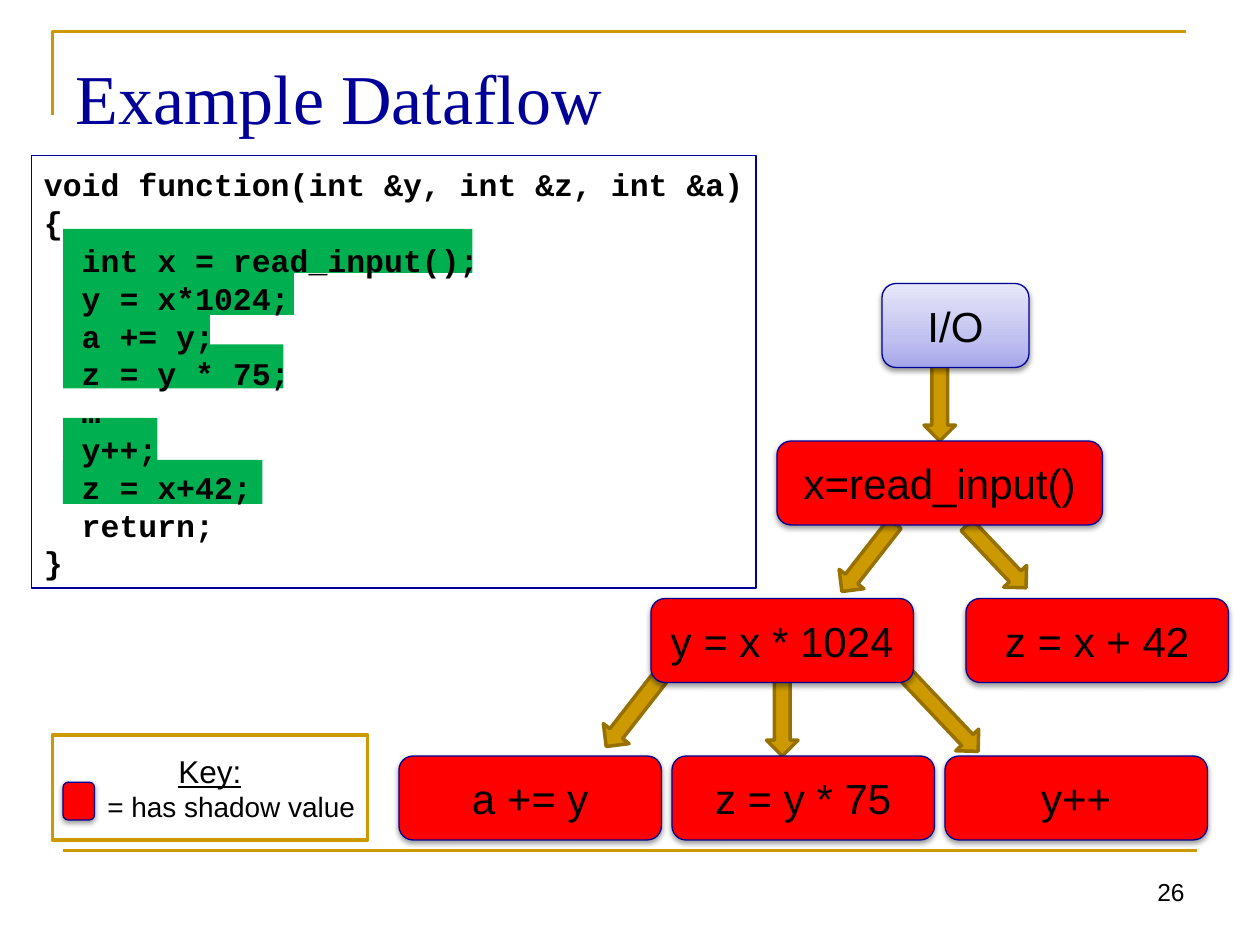
from copy import deepcopy

from lxml.etree import SubElement
from pptx import Presentation
from pptx.dml.color import RGBColor
from pptx.enum.shapes import MSO_CONNECTOR, MSO_SHAPE as Preset
from pptx.enum.text import MSO_ANCHOR as Anchor, PP_ALIGN as Align
from pptx.oxml.ns import qn
from pptx.util import Inches, Pt

BLACK = RGBColor(0x00, 0x00, 0x00)
WHITE = RGBColor(0xFF, 0xFF, 0xFF)
GOLD = RGBColor(0xCC, 0x99, 0x00)
DARK_GOLD = RGBColor(0x97, 0x71, 0x00)
NAVY = RGBColor(0x00, 0x00, 0x96)
TITLE_BLUE = RGBColor(0x00, 0x00, 0x99)
RED = RGBColor(0xFF, 0x00, 0x00)
GREEN = RGBColor(0x00, 0xB0, 0x50)
LILAC = [
    (0, RGBColor(0xA5, 0xA5, 0xEB)),
    (0.35, RGBColor(0xC1, 0xC1, 0xF0)),
    (1, RGBColor(0xE7, 0xE7, 0xFA)),
]

COLUMNS, ROWS = 120, 90
CELL = Inches(10) / COLUMNS
NODE_HEIGHT = 8

CODE = """void function(int &y, int &z, int &a)
{
  int x = read_input();
  y = x*1024;
  a += y;
  z = y * 75;
  …
  y++;
  z = x+42;
  return;
}"""

HIGHLIGHTS = [(43.8, 19), (39.8, 9), (32.8, 21), (29.8, 14), (25.8, 22), (21.8, 39)]
SLANTED_ARROWS = [
    (56, 66, 9, 3.1, 128),
    (82.1, 65.3, 13.1, 3, 46.6),
    (90.8, 51.5, 8.2, 3, 46.6),
    (78.6, 51.6, 8.2, 3, 128),
]
DOWN_ARROWS = [(73, 63, 3, 9), (88, 34, 3, 8)]
NODES = [
    (74, 42, 31, "x=read_input()"),
    (62, 57, 25, "y = x * 1024"),
    (92, 57, 25, "z = x + 42"),
    (38, 72, 25, "a += y"),
    (64, 72, 25, "z = y * 75"),
    (90, 72, 25, "y++"),
]


def grid(*cells):
    return [round(cell * CELL) for cell in cells]


def write(para, text, size, font="Arial", color=BLACK, align=Align.LEFT,
          bold=False, underline=False, spacing=None):
    para.alignment = align
    if spacing:
        para.line_spacing = Pt(spacing)
    span = para.add_run()
    span.text = text
    span.font.name = font
    span.font.size = Pt(size)
    span.font.bold = bold
    span.font.underline = underline
    span.font.color.rgb = color


def add_box(shapes, preset, area, fill=None, line=None, width=0.75, rotation=0):
    box = shapes.add_shape(preset, *grid(*area))
    box.shadow.inherit = False
    box.rotation = rotation
    if fill is None:
        box.fill.background()
    else:
        box.fill.solid()
        box.fill.fore_color.rgb = fill
    if line is None:
        box.line.fill.background()
    else:
        box.line.color.rgb = line
        box.line.width = Pt(width)
    return box


def add_arrow(shapes, preset, area, rotation=0):
    add_box(shapes, preset, area, GOLD, DARK_GOLD, 2, rotation)


def add_node(shapes, area, text=None):
    node = add_box(shapes, Preset.ROUNDED_RECTANGLE, area, RED, NAVY)
    effects = node._element.spPr.find(qn("a:effectLst"))
    shadow = SubElement(effects, qn("a:outerShdw"), blurRad=str(Pt(3.1)),
                        dist=str(Pt(1.6)), dir="5400000", rotWithShape="0")
    tint = SubElement(shadow, qn("a:srgbClr"), val=str(BLACK))
    SubElement(tint, qn("a:alpha"), val="38000")
    if text:
        node.text_frame.vertical_anchor = Anchor.MIDDLE
        write(node.text_frame.paragraphs[0], text, 24, align=Align.CENTER)
    return node


def fill_gradient(shape, stops):
    shape.fill.gradient()
    shape.fill.gradient_angle = 90
    stop_list = shape._element.spPr.find(".//" + qn("a:gsLst"))
    while len(stop_list) < len(stops):
        stop_list.append(deepcopy(stop_list[0]))
    for stop, (position, color) in zip(shape.fill.gradient_stops, stops):
        stop.position = position
        stop.color.rgb = color


def add_frame(shapes):
    builder = shapes.build_freeform(5, 11, scale=CELL)
    builder.add_line_segments([(5, 3), (113, 3)], close=False)
    corner = builder.convert_to_shape()
    corner.shadow.inherit = False
    corner.fill.background()
    rule = shapes.add_connector(MSO_CONNECTOR.STRAIGHT, *grid(6, 81, 114, 81))
    SubElement(rule._element.spPr, qn("a:effectLst"))
    for edge in (corner, rule):
        edge.line.color.rgb = GOLD
        edge.line.width = Pt(1.5)


def add_title(slide, text):
    title = slide.shapes.title
    title.left, title.top, title.width, title.height = grid(6, 3.6, 108, 8.4)
    frame = title.text_frame
    frame.vertical_anchor = Anchor.TOP
    frame.margin_top = Inches(0.13)
    write(frame.paragraphs[0], text, 40, "Times New Roman", TITLE_BLUE)


def add_page_number(shapes, text):
    box = shapes.add_textbox(*grid(86, 82.9, 28, 6.1))
    box.text_frame.word_wrap = True
    write(box.text_frame.paragraphs[0], text, 14, align=Align.RIGHT)


def add_code(shapes):
    box = add_box(shapes, Preset.RECTANGLE, (3, 14.8, 69, 41.2), line=NAVY)
    frame = box.text_frame
    frame.vertical_anchor = Anchor.TOP
    frame.margin_top = Inches(0.08)
    for index, line in enumerate(CODE.splitlines()):
        para = frame.add_paragraph() if index else frame.paragraphs[0]
        write(para, line, 18, "Courier New", bold=True, spacing=21.6)


def add_key(shapes):
    group = shapes.add_group_shape()
    box = add_box(group.shapes, Preset.RECTANGLE, (5, 70, 30, 10), WHITE, GOLD, 2)
    frame = box.text_frame
    frame.vertical_anchor = Anchor.MIDDLE
    write(frame.paragraphs[0], "Key:", 18, align=Align.CENTER, underline=True)
    write(frame.add_paragraph(), "= has shadow value", 16, align=Align.RIGHT)
    add_node(group.shapes, (6, 74.5, 3, 3.6))


def main():
    deck = Presentation()
    deck.slide_width, deck.slide_height = grid(COLUMNS, ROWS)
    slide = deck.slides.add_slide(deck.slide_layouts[5])
    shapes = slide.shapes
    add_frame(shapes)
    for top, width in HIGHLIGHTS:
        add_box(shapes, Preset.RECTANGLE, (6, top, width, 4.2), GREEN)
    add_title(slide, "Example Dataflow")
    add_page_number(shapes, "26")
    for *area, rotation in SLANTED_ARROWS:
        add_arrow(shapes, Preset.RIGHT_ARROW, area, rotation)
    for area in DOWN_ARROWS:
        add_arrow(shapes, Preset.DOWN_ARROW, area)
    fill_gradient(add_node(shapes, (84, 27, 14, NODE_HEIGHT), "I/O"), LILAC)
    for left, top, width, text in NODES:
        add_node(shapes, (left, top, width, NODE_HEIGHT), text)
    add_code(shapes)
    add_key(shapes)
    deck.save("out.pptx")


if __name__ == "__main__":
    main()
